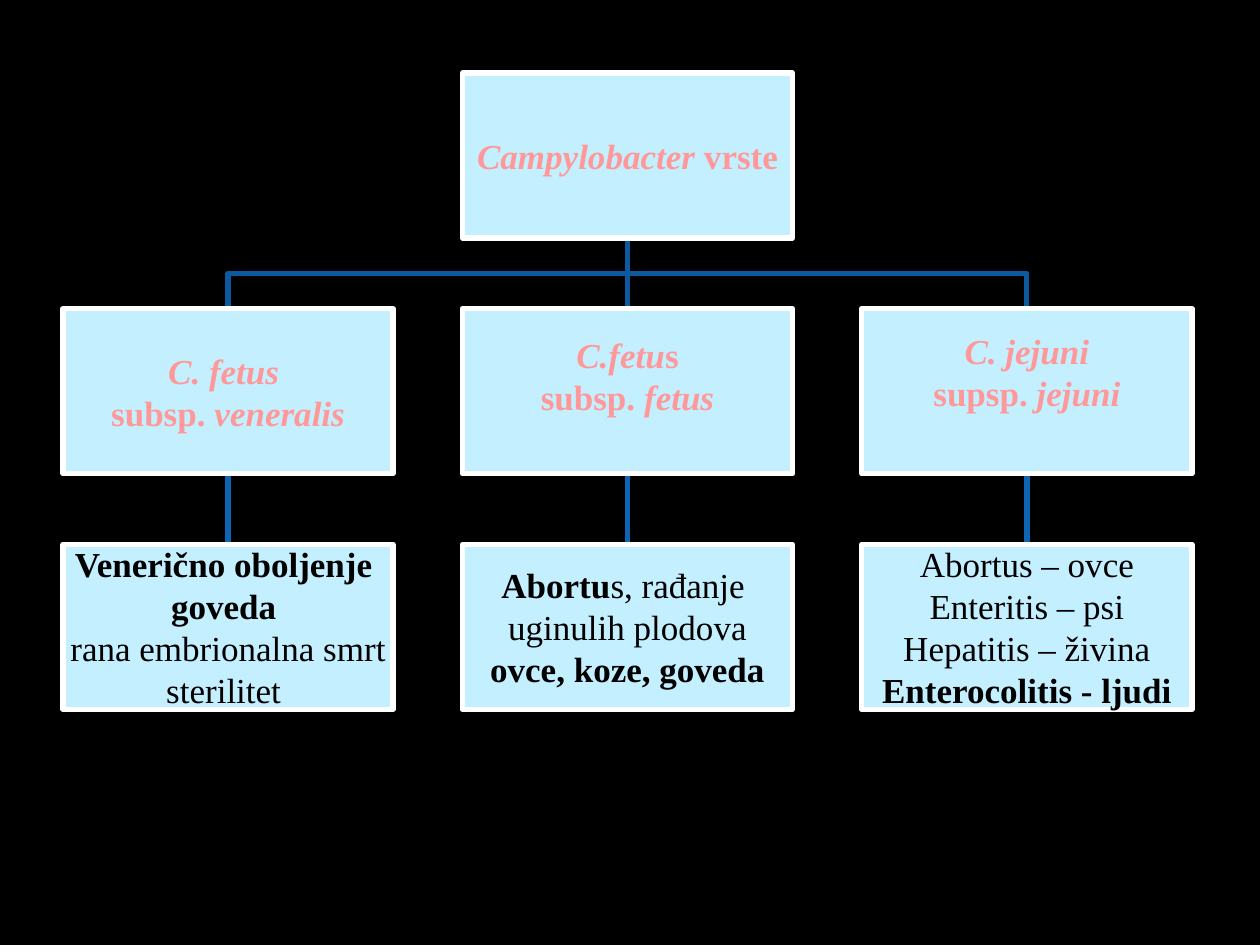
from pptx import Presentation
from pptx.dml.color import RGBColor
from pptx.enum.shapes import MSO_CONNECTOR as Connector, MSO_SHAPE as Shape
from pptx.enum.text import MSO_ANCHOR as Anchor, PP_ALIGN as Align
from pptx.oxml.ns import qn
from pptx.util import Inches, Pt
from lxml.etree import SubElement

BLACK = RGBColor(0x00, 0x00, 0x00)
WHITE = RGBColor(0xFF, 0xFF, 0xFF)
PALE_BLUE = RGBColor(0xC4, 0xEF, 0xFF)
PINK = RGBColor(0xFF, 0x99, 0x99)
UPPER_BLUE = RGBColor(0x0C, 0x59, 0x9F)
LOWER_BLUE = RGBColor(0x0E, 0x65, 0xB4)

SPECIES = [[("Campylobacter", "bi"), (" vrste", "b")]]
BRANCHES = [
    (
        [[("C. fetus ", "bi")], [("subsp. ", "b"), ("veneralis", "bi")]],
        0.01,
        [[("Venerično oboljenje ", "b")], [("goveda ", "b")],
         [("rana embrionalna smrt", "")], [("sterilitet ", "")]],
    ),
    (
        [[("C.fetu", "bi"), ("s", "b")], [("subsp. ", "b"), ("fetus", "bi")]],
        0.26,
        [[("Abortu", "b"), ("s, rađanje ", "")], [("uginulih plodova", "")],
         [("ovce, koze, goveda", "b")]],
    ),
    (
        [[("C. jejuni", "bi")], [("supsp. ", "b"), ("jejuni", "bi")]],
        0.33,
        [[("Abortus – ovce", "")], [("Enteritis – psi", "")],
         [("Hepatitis – živina", "")], [("Enterocolitis - ljudi", "b")]],
    ),
]


class TreeChart:
    """Draws a tree of boxes on a grid of columns and rows."""

    font_name, font_size, line_width = "Times New Roman", Pt(20), Pt(3)
    left, top = Inches(0.5), Inches(0.58)
    column_pitch, row_pitch = Inches(3.17), Inches(1.87)
    box_width, box_height = Inches(2.62), Inches(1.31)
    inset = Inches(0.01)

    def __init__(self, slide):
        self.slide = slide
        slide.background.fill.solid()
        slide.background.fill.fore_color.rgb = BLACK

    def outline(self, shape, color):
        shape.line.color.rgb = color
        shape.line.width = self.line_width
        SubElement(shape.line._get_or_add_ln(), qn("a:round"))

    def send_to_back(self, shape):
        shape.element.getparent().insert(2, shape.element)

    def box(self, column, row, lines, color, bottom=0.01):
        shape = self.slide.shapes.add_shape(
            Shape.RECTANGLE,
            self.left + column * self.column_pitch,
            self.top + row * self.row_pitch,
            self.box_width, self.box_height)
        shape.shadow.inherit = False
        shape.fill.solid()
        shape.fill.fore_color.rgb = PALE_BLUE
        self.outline(shape, WHITE)
        frame = shape.text_frame
        frame.word_wrap = True
        frame.vertical_anchor = Anchor.MIDDLE
        frame.margin_left = frame.margin_right = frame.margin_top = self.inset
        frame.margin_bottom = Inches(bottom)
        for index, line in enumerate(lines):
            paragraph = frame.add_paragraph() if index else frame.paragraphs[0]
            paragraph.alignment = Align.CENTER
            for text, style in line:
                self.add_run(paragraph, text, style, color)
        return shape

    def add_run(self, paragraph, text, style, color):
        run = paragraph.add_run()
        run.text = text
        run.font.name, run.font.size = self.font_name, self.font_size
        run.font.bold, run.font.italic = "b" in style, "i" in style
        run.font.color.rgb = color

    def straight(self, parent, child, color):
        connector = self.slide.shapes.add_connector(Connector.STRAIGHT, 0, 0, 0, 0)
        connector.begin_connect(parent, 2)
        connector.end_connect(child, 0)
        self.outline(connector, color)
        SubElement(connector.element.spPr, qn("a:effectLst"))
        self.send_to_back(connector)

    def elbow(self, parent, child, color):
        start_x, end_x = (box.left + box.width // 2 for box in (parent, child))
        start_y, end_y = parent.top + parent.height, child.top
        middle_y = (start_y + end_y) // 2
        builder = self.slide.shapes.build_freeform(start_x, start_y)
        builder.add_line_segments(
            [(start_x, middle_y), (end_x, middle_y), (end_x, end_y)], close=False)
        shape = builder.convert_to_shape()
        shape.shadow.inherit = False
        shape.fill.background()
        self.outline(shape, color)
        self.send_to_back(shape)


def main():
    presentation = Presentation()
    presentation.slide_width, presentation.slide_height = Inches(10), Inches(7.5)
    chart = TreeChart(presentation.slides.add_slide(presentation.slide_layouts[6]))
    species = chart.box(1, 0, SPECIES, PINK)
    for column, (name, bottom, diseases) in enumerate(BRANCHES):
        subspecies = chart.box(column, 1, name, PINK, bottom)
        disease = chart.box(column, 2, diseases, BLACK)
        join = chart.straight if column == 1 else chart.elbow
        join(species, subspecies, UPPER_BLUE)
        chart.straight(subspecies, disease, LOWER_BLUE)
    presentation.save("out.pptx")


if __name__ == "__main__":
    main()
